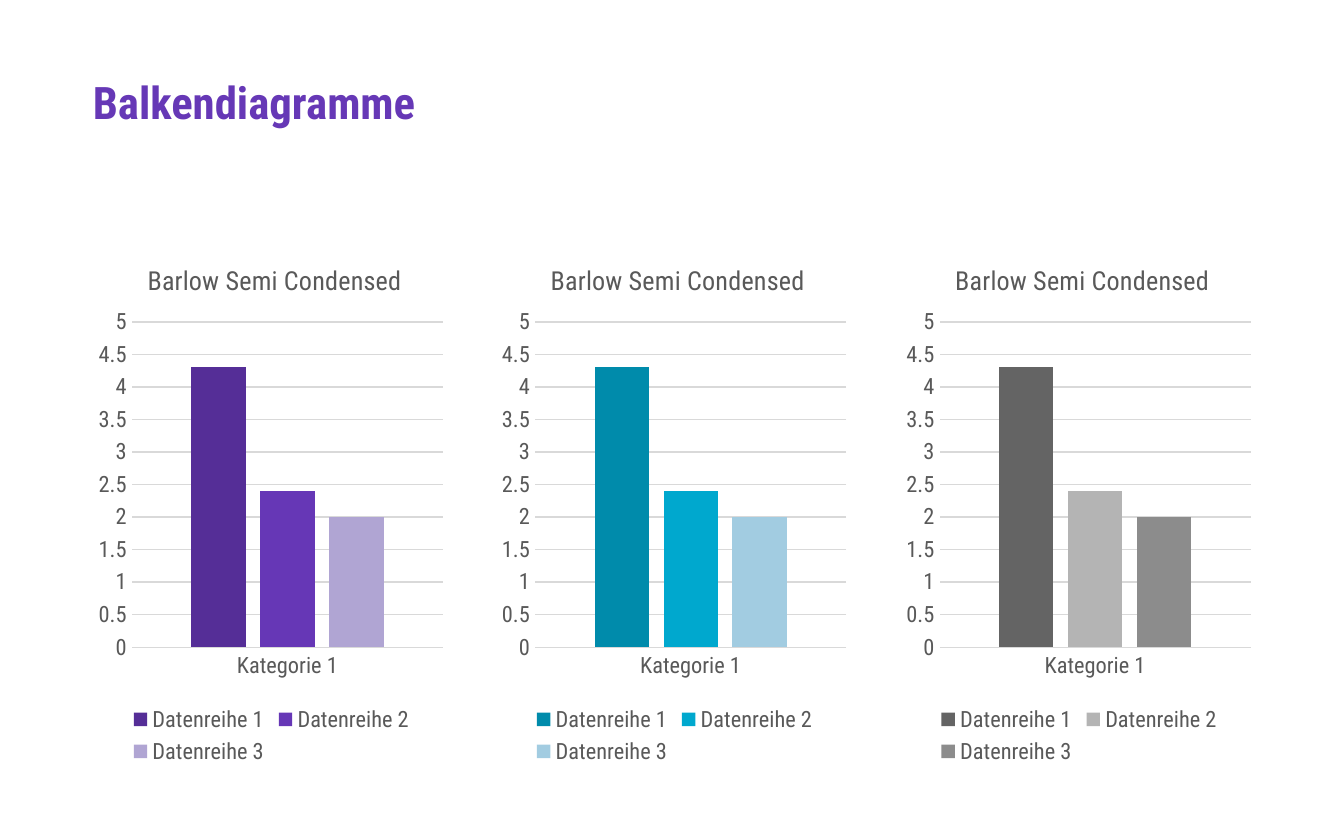
from dataclasses import dataclass

from pptx import Presentation
from pptx.chart.chart import Chart
from pptx.chart.data import CategoryChartData
from pptx.dml.color import RGBColor
from pptx.enum.chart import XL_CHART_TYPE as ChartType
from pptx.enum.chart import XL_LEGEND_POSITION as LegendPos
from pptx.enum.chart import XL_TICK_MARK as Tick
from pptx.enum.text import MSO_ANCHOR as Anchor
from pptx.enum.text import PP_ALIGN as Align
from pptx.oxml import parse_xml
from pptx.oxml.ns import nsdecls
from pptx.slide import Slide
from pptx.util import Pt

EMU_PER_PX = 9144
FONT = "Roboto Condensed"
PURPLE, TEXT_GREY, LINE_GREY = "6638B6", "595959", "D9D9D9"
VALUES = {"Datenreihe 1": 4.3, "Datenreihe 2": 2.4, "Datenreihe 3": 2}


@dataclass(frozen=True)
class BarChart:
    """A column chart's left edge in px and its series colours."""
    left: int
    colors: tuple[str, ...]


PALETTES = (
    ("552E97", "6637B6", "B0A5D3"),
    ("008BAB", "00A8CE", "A2CCE1"),
    ("646464", "B4B4B4", "8C8C8C"),
)
CHARTS = [BarChart(69 + i * 601 // 2, colors) for i, colors in enumerate(PALETTES)]


def px(n: int) -> int:
    """Turn px into EMU."""
    return n * EMU_PER_PX


def rgb(color: str) -> RGBColor:
    """Turn a hex string into a colour."""
    return RGBColor.from_string(color)


def style_font(font, size: int, color: str, bold: bool = False) -> None:
    """Set the face, size, colour and weight of a font."""
    font.name, font.size, font.bold = FONT, Pt(size), bold
    font.color.rgb = rgb(color)


def style_line(line) -> None:
    """Give an axis or grid line its thin grey stroke."""
    line.color.rgb = rgb(LINE_GREY)
    line.width = Pt(0.75)


def layout_xml(**fractions: float):
    """Build a manual chart layout from fractions of the chart area."""
    target = '<c:layoutTarget val="inner"/>' if "w" in fractions else ""
    modes = "".join(f'<c:{k}Mode val="edge"/>' for k in "xy")
    sizes = "".join(f'<c:{k} val="{v}"/>' for k, v in fractions.items())
    return parse_xml(f'<c:layout {nsdecls("c")}><c:manualLayout>'
                     f"{target}{modes}{sizes}</c:manualLayout></c:layout>")


def set_layout(chart: Chart) -> None:
    """Fix the places of the chart title and the plot area."""
    space = chart.element
    for layout in space.xpath("c:chart/c:title/c:layout | c:chart/c:plotArea/c:layout"):
        layout.getparent().remove(layout)
    space.xpath("c:chart/c:title/c:tx")[0].addnext(layout_xml(x=0.14, y=0.04))
    space.xpath("c:chart/c:plotArea")[0].insert(
        0, layout_xml(x=0.11, y=0.16, w=0.87, h=0.61))


def style_axes(chart: Chart) -> None:
    """Format both axes and the grid."""
    cat, val = chart.category_axis, chart.value_axis
    for axis in (cat, val):
        axis.major_tick_mark = axis.minor_tick_mark = Tick.NONE
        style_font(axis.tick_labels.font, 12, TEXT_GREY)
    style_line(cat.format.line)
    style_line(val.major_gridlines.format.line)
    val.format.line.fill.background()
    val.minimum_scale, val.maximum_scale, val.major_unit = 0, 5, 0.5


def add_bar_chart(s: Slide, spec: BarChart) -> None:
    """Draw one column chart with its title and legend."""
    data = CategoryChartData()
    data.categories = ["Kategorie 1"]
    for name, value in VALUES.items():
        data.add_series(name, [value])
    chart = s.shapes.add_chart(ChartType.COLUMN_CLUSTERED, px(spec.left), px(176),
                               px(266), px(397), data).chart
    chart.font.name, chart.font.size = "Arial", Pt(10)
    p = chart.chart_title.text_frame.paragraphs[0]
    p.text = "Barlow Semi Condensed"
    style_font(p.font, 14, TEXT_GREY)
    chart.has_legend = True
    chart.legend.position = LegendPos.BOTTOM
    chart.legend.include_in_layout = False
    style_font(chart.legend.font, 12, TEXT_GREY)
    style_axes(chart)
    plot = chart.plots[0]
    plot.gap_width, plot.overlap, plot.vary_by_categories = 219, -27, False
    for series, color in zip(plot.series, spec.colors):
        series.format.fill.solid()
        series.format.fill.fore_color.rgb = rgb(color)
    set_layout(chart)


def add_title(s: Slide, text: str) -> None:
    """Place and format the slide title."""
    sp = s.shapes.title
    sp.left, sp.top, sp.width, sp.height = px(69), px(62), px(862), px(32)
    tf = sp.text_frame
    tf.margin_left = tf.margin_top = tf.margin_right = tf.margin_bottom = 0
    tf.vertical_anchor = Anchor.MIDDLE
    tf.word_wrap = True
    p = tf.paragraphs[0]
    p.text, p.alignment, p.line_spacing = text, Align.LEFT, 0.9
    style_font(p.font, 24, PURPLE, bold=True)


def main() -> None:
    """Build the slide and save it."""
    prs = Presentation()
    prs.slide_width, prs.slide_height = px(1000), px(625)
    s = prs.slides.add_slide(prs.slide_layouts[5])
    add_title(s, "Balkendiagramme")
    for spec in CHARTS:
        add_bar_chart(s, spec)
    prs.save("out.pptx")


if __name__ == "__main__":
    main()
